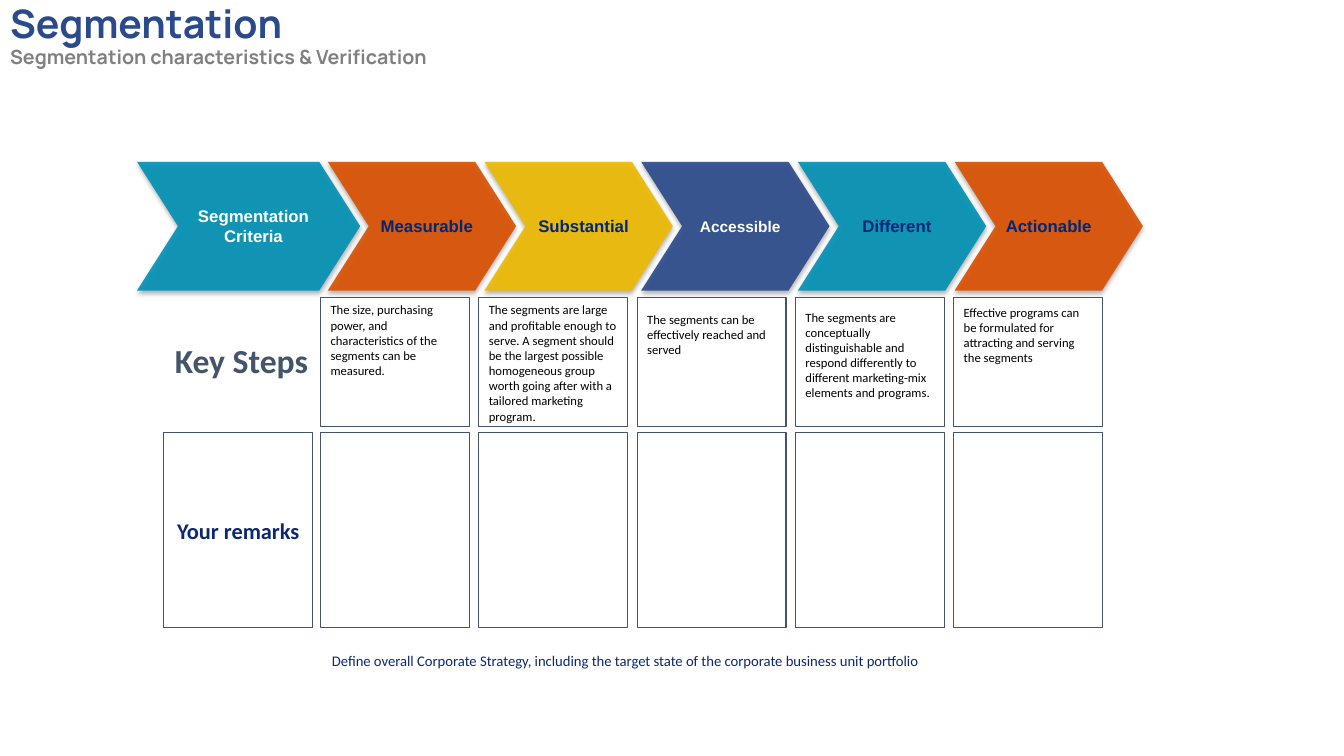
from lxml.etree import SubElement
from pptx import Presentation
from pptx.dml.color import RGBColor
from pptx.enum.shapes import MSO_SHAPE as Shape
from pptx.enum.text import MSO_ANCHOR as Anchor, MSO_AUTO_SIZE as AutoSize, PP_ALIGN as Align
from pptx.oxml.ns import qn
from pptx.util import Inches, Pt

NAVY, BLUE, TEAL, ORANGE, YELLOW = "002776", "2A4A8B", "0091B5", "DB5000", "EEBA00"
INK, SLATE, GRAY, WHITE, BLACK = "0C2870", "44546A", "808080", "FFFFFF", "000000"


def color(value):
    return RGBColor.from_string(value)


def add_alpha(parent, percent):
    SubElement(parent, qn("a:alpha"), val=str(percent * 1000))


class SlideBuilder:
    """Holds the style and the slide; places are given in grid columns and rows."""
    left, top = 1.61, 1.605
    column, row = 1.57, 1.345
    cell_width, cell_height = 0.94, 0.95
    spacing = {"space_before": Pt(6), "space_after": Pt(6)}

    def __init__(self, deck):
        self.deck = deck
        self.page = deck.slides.add_slide(deck.slide_layouts[5])

    def place(self, column, row, width, height):
        return (Inches(self.left + column * self.column), Inches(self.top + row * self.row),
                Inches(width * self.column), Inches(height * self.row))

    def apply(self, target, values):
        for name, value in values.items():
            setattr(target, name, value)

    def set_text(self, shape, lines, margins=(0.1, 0.05, 0.1, 0.05), anchor=Anchor.MIDDLE,
                 **layout):
        """Each line is (text, size, colour, bold, font)."""
        frame = shape.text_frame
        sides = ("margin_left", "margin_top", "margin_right", "margin_bottom")
        self.apply(frame, dict(zip(sides, map(Inches, margins)), word_wrap=True,
                               auto_size=AutoSize.NONE, vertical_anchor=anchor))
        for index, (text, size, tint, bold, font) in enumerate(lines):
            para = frame.add_paragraph() if index else frame.paragraphs[0]
            self.apply(para, {"alignment": Align.LEFT, **layout})
            span = para.add_run()
            span.text = text
            self.apply(span.font, {"size": Pt(size), "bold": bold, "name": font})
            span.font.color.rgb = color(tint)

    def shape(self, kind, place, fill, alpha=100, line=None):
        box = self.page.shapes.add_shape(kind, *self.place(*place))
        box.shadow.inherit = False
        box.fill.solid()
        box.fill.fore_color.rgb = color(fill)
        if alpha < 100:
            add_alpha(box._element.spPr.find(".//" + qn("a:srgbClr")), alpha)
        if line:
            box.line.color.rgb = color(line)
            box.line.width = Pt(0.75)
        else:
            box.line.fill.background()
        return box

    def title(self, lines):
        box = self.page.shapes.title
        deck = self.deck
        self.apply(box, {"left": 0, "top": 0, "width": int(deck.slide_width * 0.9),
                         "height": int(deck.slide_height * 0.15)})
        self.set_text(box, lines, anchor=Anchor.TOP, line_spacing=0.9, space_before=Pt(0))

    def chevron(self, column, width, text, fill, tint, size=12, inset=0.1):
        arrow = self.shape(Shape.CHEVRON, (column, 0, width, self.cell_height), fill, alpha=90)
        arrow.adjustments[0] = 0.318
        effects = arrow._element.spPr.find(qn("a:effectLst"))
        shadow = SubElement(effects, qn("a:outerShdw"), blurRad=str(Pt(3.5)), dist=str(Pt(2.2)),
                            dir="5400000", algn="t", rotWithShape="0")
        add_alpha(SubElement(shadow, qn("a:srgbClr"), val=BLACK), 32)
        self.set_text(arrow, [(text, size, tint, True, "Arial")], (inset, 0.05, 0, 0.05),
                      alignment=Align.CENTER, **self.spacing)

    def cell(self, column, row, height):
        place = (column, row, self.cell_width, height)
        return self.shape(Shape.RECTANGLE, place, WHITE, line=SLATE)

    def label(self, place, text, size, tint):
        box = self.page.shapes.add_textbox(*self.place(*place))
        self.set_text(box, [(text, size, tint, True, "Calibri")], (0.05, 0.05, 0.05, 0.05),
                      alignment=Align.CENTER)


# Criterion, fill, text colour, text size, left inset, key step, top inset of the key step
CRITERIA = [
    ("Measurable", ORANGE, NAVY, 12, 0.1,
     "The size, purchasing power, and characteristics of the segments can be\nmeasured.", 0.05),
    ("Substantial", YELLOW, NAVY, 12, 0.1,
     "The segments are large and profitable enough to serve. A segment should be the largest "
     "possible homogeneous group worth going after with a tailored marketing program.", 0.05),
    ("Accessible", BLUE, WHITE, 11, 0.1,
     "The segments can be effectively reached and served", 0.14),
    ("Different", TEAL, NAVY, 12, 0.1,
     "The segments are conceptually distinguishable and respond differently to different "
     "marketing-mix elements and programs.", 0.12),
    ("Actionable", ORANGE, NAVY, 12, 0,
     "Effective programs can be formulated for attracting and serving the segments", 0.07),
]


def main():
    deck = Presentation()
    deck.slide_width, deck.slide_height = Inches(13.33), Inches(7.5)
    builder = SlideBuilder(deck)

    # Heading
    builder.title([("Segmentation", 28, BLUE, True, "Manrope"),
                   ("Segmentation characteristics & Verification", 14, GRAY, True, "Manrope")])

    # Criteria with their key steps and empty remark boxes
    remarks_height = 1.435
    for index, (name, fill, tint, size, inset, step, top) in enumerate(CRITERIA):
        builder.chevron(1.045 + index * 0.99, 1.19, name, fill, tint, size, inset)
        lines = [(text, 9, BLACK, False, "Calibri") for text in step.split("\n")]
        builder.set_text(builder.cell(index + 1, 1, builder.cell_height), lines,
                         (0.1, top, 0.1, 0), Anchor.TOP)
        builder.cell(index + 1, 2, remarks_height)

    # Row headings
    builder.chevron(-0.16, 1.41, "Segmentation Criteria", TEAL, WHITE)
    builder.label((0.01, 1.28, 0.98, 0.37), "Key Steps", 24, SLATE)
    builder.set_text(builder.cell(0.01, 2, remarks_height),
                     [("Your remarks", 16, INK, True, "Calibri")],
                     alignment=Align.CENTER, **builder.spacing)

    # Closing line
    footer = builder.shape(Shape.ROUNDED_RECTANGLE, (1, 3.5, 4.93, 0.36), WHITE, 50, WHITE)
    footer.adjustments[0] = 0.1
    builder.set_text(footer, [("Define overall Corporate Strategy, including the target state of "
                               "the corporate business unit portfolio", 10.5, INK, False,
                               "Calibri")], **builder.spacing)

    deck.save("out.pptx")


if __name__ == "__main__":
    main()
